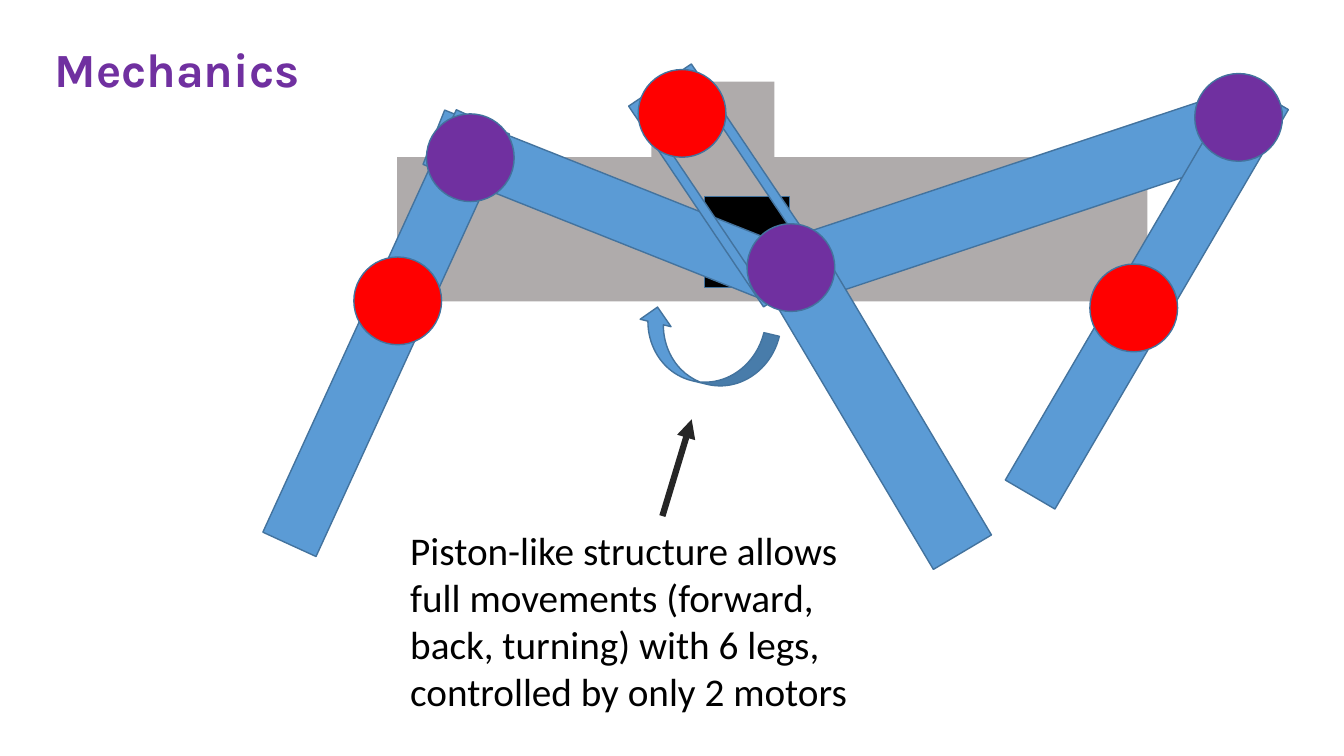
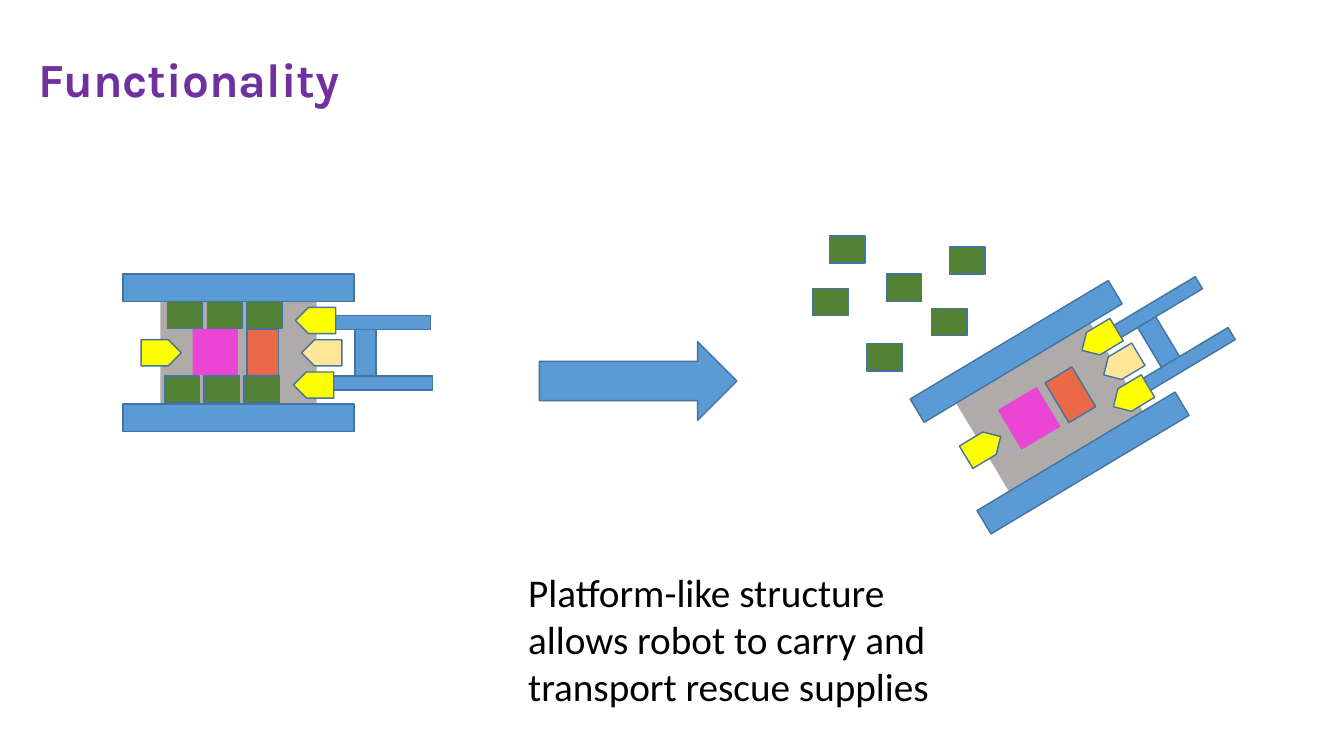
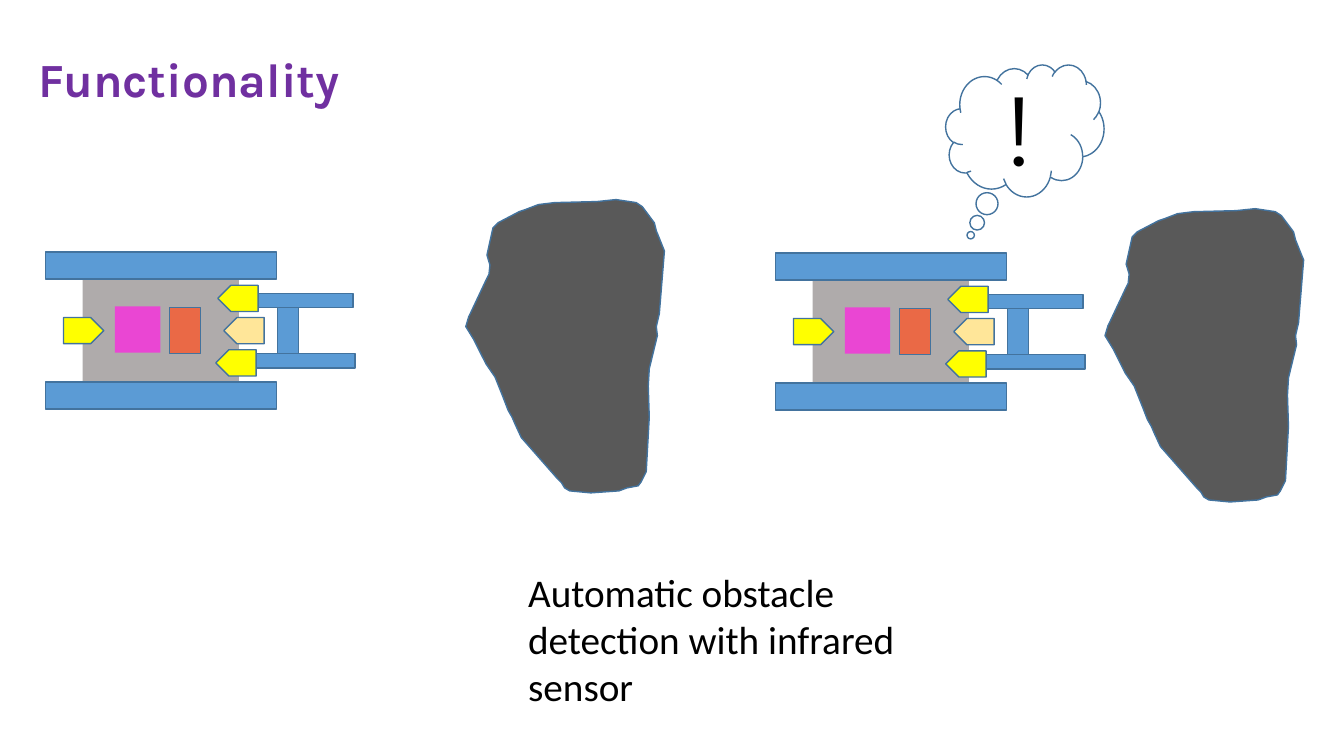
from lxml import etree
from pptx import Presentation
from pptx.dml.color import RGBColor
from pptx.enum.shapes import MSO_CONNECTOR, MSO_SHAPE as SHAPE
from pptx.enum.text import MSO_ANCHOR, MSO_AUTO_SIZE, PP_ALIGN
from pptx.oxml.ns import qn
from pptx.util import Inches, Pt

COLORS = {
    "purple": "7030A0", "red": "FF0000", "blue": "5B9BD5", "outline": "43739E",
    "gray": "AFABAB", "black": "000000", "charcoal": "262626", "rock": "595959",
    "yellow": "FFFF00", "cream": "FFE699", "pink": "EA46D3", "orange": "EA6946",
    "green": "548235", "white": "FFFFFF",
}
JOINT = 0.87
CRATE = (0.35, 0.27)
SENSOR = (0.4, 0.26)

# Boulder outline in hundredths of an inch from its top-left corner
BOULDER = [
    (55, 236), (49, 223), (46, 216), (42, 209), (37, 196), (29, 176), (20, 163),
    (8, 139), (0, 126), (3, 116), (5, 112), (21, 78), (23, 74), (24, 65),
    (21, 55), (27, 28), (32, 23), (53, 12), (59, 10), (72, 5), (88, 3),
    (130, 2), (149, 0), (169, 3), (175, 7), (184, 19), (187, 23), (189, 31),
    (197, 51), (192, 113), (189, 126), (190, 135), (182, 168), (181, 185),
    (182, 216), (179, 270), (174, 280), (171, 284), (160, 286), (152, 289),
    (124, 291), (103, 289), (98, 286), (95, 281), (91, 277),
]

# Robot parts seen from above: shape, left, top, width, height, fill, outlined, rotation
ROBOT = [
    (SHAPE.RECTANGLE, 2.3, 0.53, 0.21, 0.49, "blue", True, 0),
    (SHAPE.RECTANGLE, 0.37, 0.27, 1.55, 1.02, "gray", False, 0),
    (SHAPE.RECTANGLE, 0, 0, 2.29, 0.27, "blue", True, 0),
    (SHAPE.RECTANGLE, 0, 1.29, 2.29, 0.27, "blue", True, 0),
    (SHAPE.PENTAGON, 0.18, 0.65, *SENSOR, "yellow", True, 0),
    (SHAPE.RECTANGLE, 1.83, 0.41, 1.22, 0.14, "blue", True, 0),
    (SHAPE.PENTAGON, 1.71, 0.33, *SENSOR, "yellow", True, 180),
    (SHAPE.RECTANGLE, 1.85, 1.01, 1.22, 0.14, "blue", True, 0),
    (SHAPE.PENTAGON, 1.77, 0.65, *SENSOR, "cream", True, 180),
    (SHAPE.PENTAGON, 1.69, 0.97, *SENSOR, "yellow", True, 180),
    (SHAPE.RECTANGLE, 0.69, 0.54, 0.45, 0.46, "pink", False, 0),
    (SHAPE.RECTANGLE, 1.23, 0.55, 0.31, 0.46, "orange", True, 0),
]


def rgb(name):
    return RGBColor.from_string(COLORS[name])


def style(sp, fill, outlined=True):
    sp.shadow.inherit = False
    if fill:
        sp.fill.solid()
        sp.fill.fore_color.rgb = rgb(fill)
    else:
        sp.fill.background()
    if outlined:
        sp.line.color.rgb = rgb("outline")
        sp.line.width = Pt(1)
    else:
        sp.line.fill.background()


def add_part(parent, kind, x, y, w, h, fill, outlined=True, rot=0):
    sp = parent.shapes.add_shape(kind, Inches(x), Inches(y), Inches(w), Inches(h))
    sp.rotation = rot
    style(sp, fill, outlined)
    return sp


def add_joint(s, x, y, fill):
    add_part(s, SHAPE.OVAL, x, y, JOINT, JOINT, fill)


def add_bar(s, x, y, w, h, rot, kind=SHAPE.RECTANGLE):
    add_part(s, kind, x, y, w, h, "blue", rot=rot)


def add_crate(s, x, y):
    add_part(s, SHAPE.RECTANGLE, x, y, *CRATE, "green")


def add_robot(s, x, y, rot=0):
    """Place the grouped robot by the corner of its unrotated box."""
    robot = s.shapes.add_group_shape()
    for kind, dx, dy, w, h, fill, outlined, turn in ROBOT:
        add_part(robot, kind, x + dx, y + dy, w, h, fill, outlined, turn)
    robot.rotation = rot


def add_boulder(s, x, y):
    outline = s.shapes.build_freeform(*BOULDER[0], scale=Inches(0.01))
    outline.add_line_segments(BOULDER[1:], close=True)
    style(outline.convert_to_shape(Inches(x), Inches(y)), "rock")


def add_run(p, text, size, font, color, bold=False):
    r = p.add_run()
    r.text = text
    r.font.size = Pt(size)
    r.font.name = font
    r.font.bold = bold
    r.font.color.rgb = rgb(color)


def add_text_box(s, x, y, w, h, wrap):
    tf = s.shapes.add_textbox(Inches(x), Inches(y), Inches(w), Inches(h)).text_frame
    tf.word_wrap = wrap
    tf.auto_size = MSO_AUTO_SIZE.SHAPE_TO_FIT_TEXT
    return tf.paragraphs[0]


def add_title(s, text, x=0.24, y=0.45, w=3.27):
    p = add_text_box(s, x, y, w, 0.67, wrap=False)
    p.alignment = PP_ALIGN.CENTER
    add_run(p, text, 34, "Karla", "purple", bold=True)


def add_caption(s, text, x=5.14, y=5.59, w=4.22, h=1.51):
    add_run(add_text_box(s, x, y, w, h, wrap=True), text, 28, "Calibri", "black")


def add_pointer(s, x1, y1, x2, y2):
    line = s.shapes.add_connector(
        MSO_CONNECTOR.STRAIGHT, Inches(x1), Inches(y1), Inches(x2), Inches(y2))
    line.line.color.rgb = rgb("charcoal")
    line.line.width = Pt(4.5)
    etree.SubElement(line.line._get_or_add_ln(), qn("a:tailEnd"), type="triangle")
    etree.SubElement(line._element.spPr, qn("a:effectLst"))


def add_thought(s, text):
    cloud = add_part(s, SHAPE.CLOUD_CALLOUT, 9.38, 0.64, 1.57, 1.31, None)
    cloud.adjustments[0] = -0.342
    cloud.adjustments[1] = 0.793
    tf = cloud.text_frame
    tf.vertical_anchor = MSO_ANCHOR.MIDDLE
    p = tf.paragraphs[0]
    p.alignment = PP_ALIGN.CENTER
    add_run(p, text, 70, "Montserrat", "black")


def add_slide(prs):
    s = prs.slides.add_slide(prs.slide_layouts[6])
    s.background.fill.solid()
    s.background.fill.fore_color.rgb = rgb("white")
    return s


def build_mechanics(prs):
    s = add_slide(prs)
    add_part(s, SHAPE.RECTANGLE, 3.94, 1.56, 7.44, 1.43, "gray", False)
    add_part(s, SHAPE.RECTANGLE, 6.46, 0.81, 1.22, 0.97, "gray", False)
    add_part(s, SHAPE.RECTANGLE, 6.99, 1.95, 0.84, 0.9, "black")
    add_bar(s, 6.02, 0, 0.58, 4.32, 111.7)
    add_bar(s, 9.74, -0.25, 0.66, 4.43, 71.6)
    add_bar(s, 6.84, 0.64, 0.75, 2.4, 326.1, SHAPE.FRAME)
    add_bar(s, 8.33, 2.27, 0.67, 3.45, 329.3)
    add_joint(s, 7.41, 2.22, "purple")
    add_bar(s, 11.09, 0.63, 0.57, 4.59, 30.3)
    add_joint(s, 11.85, 0.73, "purple")
    add_bar(s, 3.54, 1, 0.58, 4.61, 24.6)
    add_joint(s, 4.23, 1.13, "purple")
    for x, y in [(3.51, 2.55), (10.81, 2.62), (6.33, 0.69)]:
        add_joint(s, x, y, "red")
    add_bar(s, 6.66, 2.78, 0.63, 1.4, 103.5, SHAPE.CURVED_LEFT_ARROW)
    add_caption(s, "Piston-like structure allows full movements (forward, back, "
                   "turning) with 6 legs, controlled by only 2 motors",
                3.97, 5.17, 4.69, 1.99)
    add_pointer(s, 6.57, 5.12, 6.86, 4.16)
    add_title(s, "Mechanics", 0.42, 0.35, 2.67)


def build_transport(prs):
    s = add_slide(prs)
    add_robot(s, 1.22, 2.72)
    add_robot(s, 9.21, 3.06, 329.1)
    add_part(s, SHAPE.RIGHT_ARROW, 5.35, 3.39, 1.96, 0.78, "blue")
    add_title(s, "Functionality")
    add_caption(s, "Platform-like structure allows robot to carry and "
                   "transport rescue supplies")
    for left, top in [(1.66, 2.99), (1.63, 3.73)]:
        for col in range(3):
            add_crate(s, left + 0.395 * col, top)
    for x, y in [(8.23, 2.34), (8.06, 2.86), (8.79, 2.72),
                 (9.24, 3.06), (8.6, 3.41), (9.42, 2.45)]:
        add_crate(s, x, y)


def build_detection(prs):
    s = add_slide(prs)
    add_robot(s, 0.45, 2.5)
    add_boulder(s, 4.62, 1.98)
    add_robot(s, 7.69, 2.51)
    add_boulder(s, 10.96, 2.07)
    add_thought(s, "!")
    add_title(s, "Functionality")
    add_caption(s, "Automatic obstacle detection with infrared sensor")


def main():
    prs = Presentation()
    prs.slide_width = Inches(13.33)
    prs.slide_height = Inches(7.5)
    build_mechanics(prs)
    build_transport(prs)
    build_detection(prs)
    prs.save("out.pptx")


if __name__ == "__main__":
    main()
